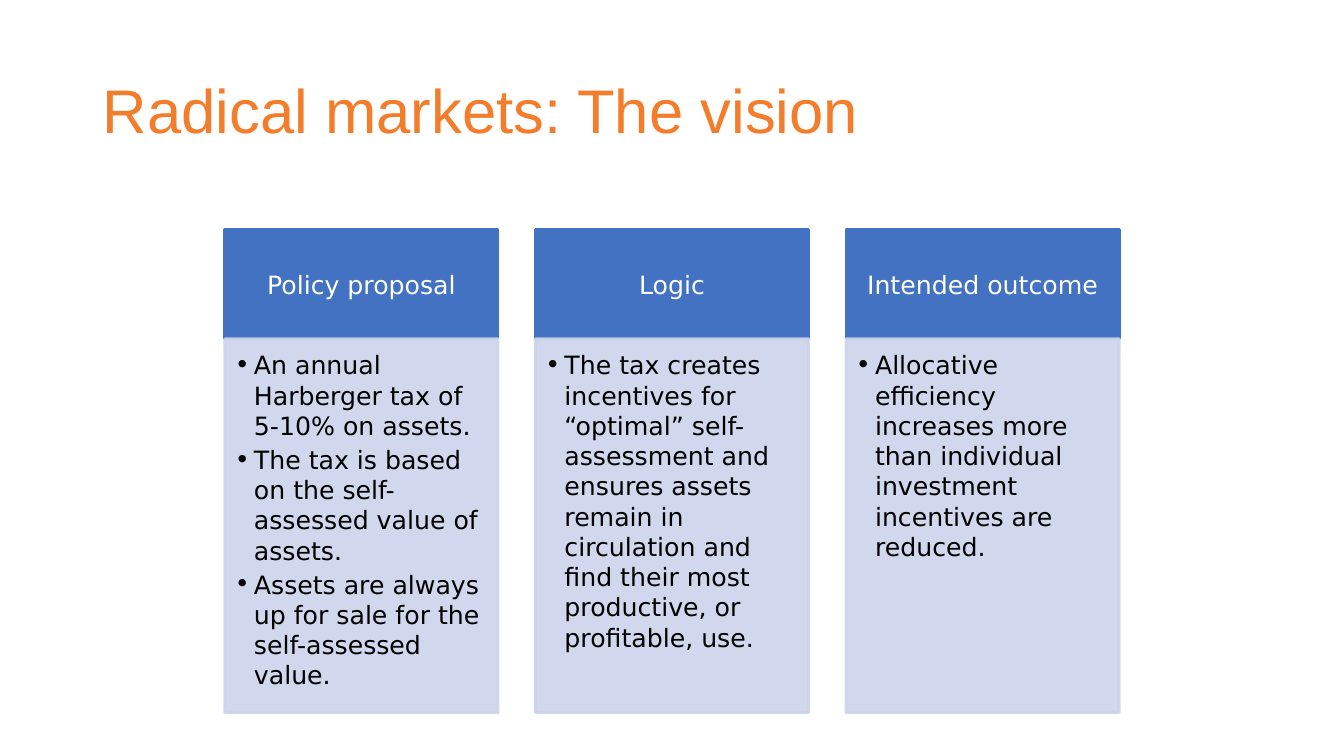
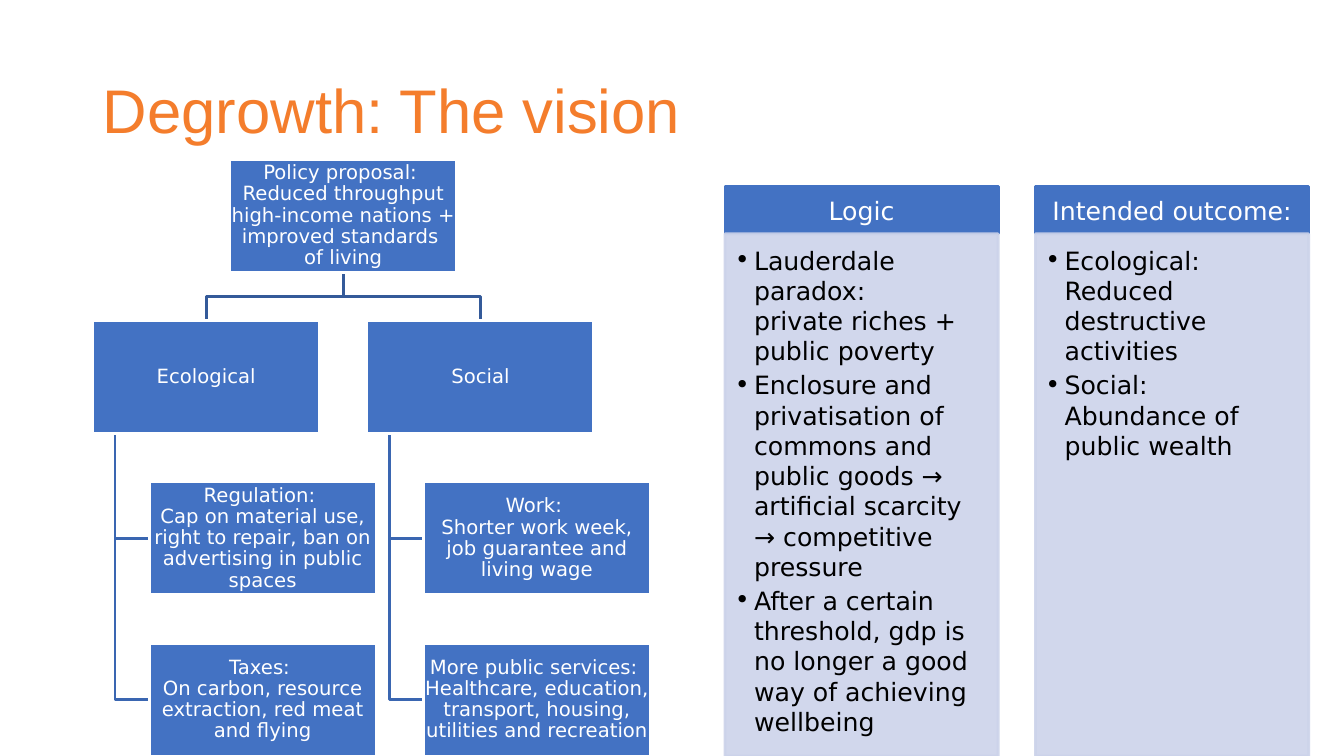
"""Build two slides that set out the visions of radical markets and degrowth."""
import lxml.etree
import pptx
import pptx.dml.color
import pptx.enum.shapes
import pptx.enum.text
import pptx.oxml.ns
import pptx.util

Inches = pptx.util.Inches
Pt = pptx.util.Pt
qn = pptx.oxml.ns.qn
ALIGN = pptx.enum.text.PP_ALIGN
ANCHOR = pptx.enum.text.MSO_ANCHOR

COLORS = {
    "title": "F47D2C",
    "block": "4372C3",
    "panel": "CCD3EA",
    "trunk": "345A99",
    "branch": "3A66B1",
    "light": "FFFFFF",
    "dark": "000000",
}
TITLE_FONT = "Arial"
BODY_FONT = "DejaVu Sans"

COLUMN_WIDTH = 2.71
COLUMN_STEP = 3.08
BULLET_INDENT = 0.19

BOX_WIDTH = 2.25
BOX_HEIGHT = 1.12
TREE_LEFT = 0.92
TREE_TOP = 1.58
ROW_STEP = 1.6
BRANCH_STEP = 2.72
LEAF_INDENT = 0.56
SPINE_INDENT = 0.22

MARKET_COLUMNS = [
    ("Policy proposal", [
        "An annual Harberger tax of 5-10% on assets.",
        "The tax is based on the self-assessed value of assets.",
        "Assets are always up for sale for the self-assessed value.",
    ]),
    ("Logic", [
        "The tax creates incentives for “optimal” self-assessment and ensures "
        "assets remain in circulation and find their most productive, or "
        "profitable, use.",
    ]),
    ("Intended outcome", [
        "Allocative efficiency increases more than individual investment "
        "incentives are reduced.",
    ]),
]
DEGROWTH_COLUMNS = [
    ("Logic", [
        "Lauderdale paradox: \nprivate riches + public poverty",
        "Enclosure and privatisation of commons and public goods → "
        "artificial scarcity → competitive pressure",
        "After a certain threshold, gdp is no longer a good way of achieving "
        "wellbeing",
    ]),
    ("Intended outcome:", [
        "Ecological: Reduced destructive activities",
        "Social: Abundance of public wealth",
    ]),
]
DEGROWTH_ROOT = (
    "Policy proposal: \nReduced throughput high-income nations + "
    "improved standards \nof living"
)
DEGROWTH_BRANCHES = [
    ("Ecological", [
        "Regulation: \nCap on material use, right to repair, ban on "
        "advertising in public spaces",
        "Taxes: \nOn carbon, resource extraction, red meat and flying",
    ]),
    ("Social", [
        "Work: \nShorter work week, job guarantee and living wage",
        "More public services: \nHealthcare, education, transport, housing, "
        "utilities and recreation",
    ]),
]


def rgb(name):
    """Return a named colour of the palette."""
    return pptx.dml.color.RGBColor.from_string(COLORS[name])


def write_paragraph(para, text, size, color, font=BODY_FONT, align=ALIGN.LEFT):
    """Set the text of a paragraph and format its runs."""
    para.text = text
    para.alignment = align
    for span in para.runs:
        span.font.name = font
        span.font.size = Pt(size)
        span.font.color.rgb = rgb(color)


def set_frame(frame, insets, anchor):
    """Set wrapping, insets (left, top, right, bottom) and anchor."""
    frame.word_wrap = True
    frame.auto_size = pptx.enum.text.MSO_AUTO_SIZE.NONE
    frame.vertical_anchor = anchor
    (frame.margin_left, frame.margin_top,
     frame.margin_right, frame.margin_bottom) = map(Inches, insets)


def add_page(deck, title):
    """Add a slide with the shared title style."""
    page = deck.slides.add_slide(deck.slide_layouts.get_by_name("Title Only"))
    box = page.shapes.title
    box.left, box.top, box.width, box.height = map(Inches, (0.92, 0.4, 11.5, 1.45))
    set_frame(box.text_frame, (0.1, 0.05, 0.1, 0.05), ANCHOR.MIDDLE)
    para = box.text_frame.paragraphs[0]
    write_paragraph(para, title, 44, "title", TITLE_FONT)
    para.line_spacing = 0.9
    return page


def add_box(page, place, fill, line):
    """Add a flat rectangle with a two-point outline."""
    box = page.shapes.add_shape(
        pptx.enum.shapes.MSO_SHAPE.RECTANGLE, *map(Inches, place))
    box.shadow.inherit = False
    box.fill.solid()
    box.fill.fore_color.rgb = rgb(fill)
    box.line.color.rgb = rgb(line)
    box.line.width = Pt(2)
    return box


def set_opacity(box, percent):
    """Make the fill and outline of a box partly transparent."""
    for color in box.element.spPr.iter(qn("a:srgbClr")):
        lxml.etree.SubElement(color, qn("a:alpha"), val=str(percent * 1000))


def add_bullet(para):
    """Give a paragraph a hanging black bullet."""
    indent = Inches(BULLET_INDENT)
    props = para._p.get_or_add_pPr()
    props.set("marL", str(indent))
    props.set("indent", str(-indent))
    color = lxml.etree.SubElement(props, qn("a:buClr"))
    lxml.etree.SubElement(color, qn("a:srgbClr"), val=COLORS["dark"])
    lxml.etree.SubElement(props, qn("a:buFont"), typeface=BODY_FONT)
    lxml.etree.SubElement(props, qn("a:buChar"), char="•")


def add_columns(page, left, top, head_height, body_height, columns):
    """Add equal columns, each a heading block over a bulleted panel."""
    for index, (heading, points) in enumerate(columns):
        x = left + index * COLUMN_STEP
        head = add_box(page, (x, top, COLUMN_WIDTH, head_height), "block", "block")
        set_frame(head.text_frame, (0.14, 0.08, 0.14, 0.08), ANCHOR.MIDDLE)
        write_paragraph(head.text_frame.paragraphs[0], heading, 18, "light",
                        align=ALIGN.CENTER)

        panel = add_box(page, (x, top + head_height, COLUMN_WIDTH, body_height),
                        "panel", "panel")
        set_opacity(panel, 90)
        frame = panel.text_frame
        set_frame(frame, (0.1, 0.11, 0.14, 0.16), ANCHOR.TOP)
        for number, point in enumerate(points):
            para = frame.add_paragraph() if number else frame.paragraphs[0]
            write_paragraph(para, point, 18, "dark")
            para.space_before = Pt(2.7 if number else 0)
            add_bullet(para)


def add_node(page, x, y, text):
    """Add one box of the tree."""
    node = add_box(page, (x, y, BOX_WIDTH, BOX_HEIGHT), "block", "light")
    set_frame(node.text_frame, (0.01,) * 4, ANCHOR.MIDDLE)
    para = node.text_frame.paragraphs[0]
    write_paragraph(para, text, 14, "light", align=ALIGN.CENTER)
    para.line_spacing = 0.9


def add_elbow(page, points, color):
    """Add an open bent line through the given points."""
    start, *rest = [tuple(map(Inches, point)) for point in points]
    builder = page.shapes.build_freeform(*start)
    builder.add_line_segments(rest, close=False)
    elbow = builder.convert_to_shape()
    elbow.shadow.inherit = False
    elbow.fill.background()
    elbow.line.color.rgb = rgb(color)
    elbow.line.width = Pt(2)


def add_tree(page, root_text, branches):
    """Add a root centred over its branches, with leaves hung from each."""
    tops = [TREE_TOP + row * ROW_STEP for row in range(4)]
    lefts = [TREE_LEFT + index * BRANCH_STEP for index in range(len(branches))]
    root_left = (lefts[0] + lefts[-1]) / 2
    root_bottom, branch_bottom = (top + BOX_HEIGHT for top in tops[:2])
    bar = (root_bottom + tops[1]) / 2
    root_middle = root_left + BOX_WIDTH / 2

    nodes = [(root_left, tops[0], root_text)]
    for x, (text, leaves) in zip(lefts, branches):
        middle = x + BOX_WIDTH / 2
        add_elbow(page, [(root_middle, root_bottom), (root_middle, bar),
                         (middle, bar), (middle, tops[1])], "trunk")
        nodes.append((x, tops[1], text))
        spine = x + SPINE_INDENT
        leaf_left = x + LEAF_INDENT
        for top, leaf in zip(tops[2:], leaves):
            level = top + BOX_HEIGHT / 2
            add_elbow(page, [(spine, branch_bottom), (spine, level),
                             (leaf_left, level)], "branch")
            nodes.append((leaf_left, top, leaf))
    for node in nodes:
        add_node(page, *node)


def main():
    """Build and save the deck."""
    deck = pptx.Presentation()
    deck.slide_width, deck.slide_height = Inches(13.33), Inches(7.5)

    page = add_page(deck, "Radical markets: The vision")
    add_columns(page, 2.23, 2.28, 1.08, 3.71, MARKET_COLUMNS)

    page = add_page(deck, "Degrowth: The vision")
    add_columns(page, 7.19, 1.85, 0.47, 5.18, DEGROWTH_COLUMNS)
    add_tree(page, DEGROWTH_ROOT, DEGROWTH_BRANCHES)

    deck.save("out.pptx")


if __name__ == "__main__":
    main()
